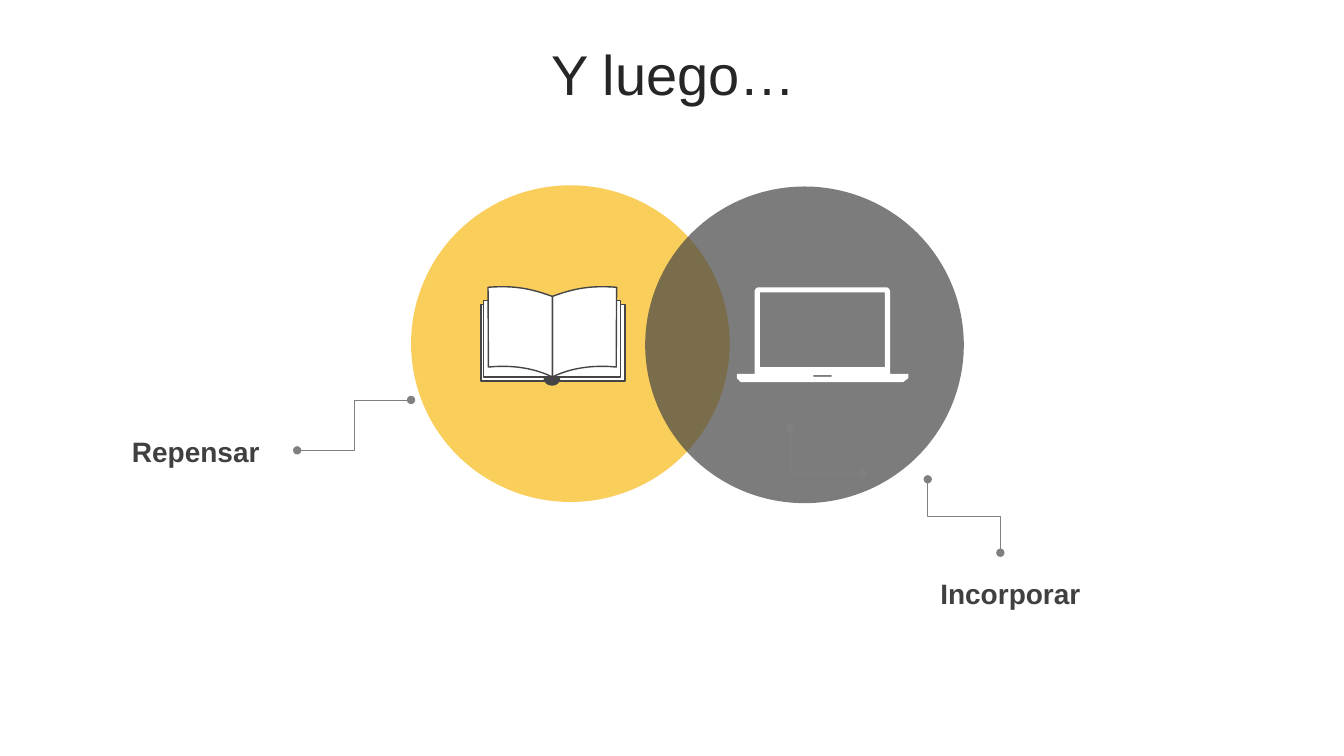
import pptx
import pptx.util
import pptx.dml.color
import pptx.enum.shapes
import pptx.enum.text
import pptx.oxml
import pptx.oxml.ns
import lxml.etree

Cm, Pt = pptx.util.Cm, pptx.util.Pt
RGB = pptx.dml.color.RGBColor.from_string
qn = pptx.oxml.ns.qn
MSO_SHAPE = pptx.enum.shapes.MSO_SHAPE
COLORS = {"title": "262626", "label": "404040", "yellow": "F8BA16",
          "dark": "454545", "line": "808080", "white": "FFFFFF"}


def style(shape, fill, line=None):
    shape.shadow.inherit = False
    shape.fill.solid()
    shape.fill.fore_color.rgb = RGB(COLORS[fill])
    if line:
        shape.line.color.rgb = RGB(COLORS[line])
        shape.line.width = Pt(1)
    else:
        shape.line.fill.background()


def outline(shapes, contours, fill, line=None):
    """Closed contours in cm; an entry of three points is a Bézier curve."""
    builder = None
    for start, *segments in contours:
        points = [start]
        for segment in segments:
            if len(segment) == 2:
                points.append(segment)
                continue
            corners = (points[-1], *segment)
            for step in range(1, 13):
                t = step / 12
                weights = ((1 - t) ** 3, 3 * t * (1 - t) ** 2, 3 * t * t * (1 - t), t ** 3)
                points.append(tuple(sum(w * corner[axis] for w, corner in zip(weights, corners))
                                    for axis in (0, 1)))
        points = [(Cm(x), Cm(y)) for x, y in points]
        if builder is None:
            builder = shapes.build_freeform(*points[0])
        else:
            builder.move_to(*points[0])
        builder.add_line_segments(points[1:], close=True)
    style(builder.convert_to_shape(), fill, line)


presentation = pptx.Presentation()
presentation.slide_width, presentation.slide_height = Cm(33.87), Cm(19.05)
slide = presentation.slides.add_slide(presentation.slide_layouts[6])

# Overlapping circles
circles = slide.shapes.add_group_shape()
for left, top, color in ((10.36, 4.67, "yellow"), (16.26, 4.7, "dark")):
    circle = circles.shapes.add_shape(MSO_SHAPE.OVAL, Cm(left), Cm(top), Cm(8.03), Cm(7.98))
    style(circle, color)
    solid_color = circle.fill._xPr.find(".//" + qn("a:srgbClr"))
    lxml.etree.SubElement(solid_color, qn("a:alpha"), val="70000")

# Title and labels
for text, left, top, width, height, size, color, bold in (
        ("Y luego…", 0.89, 0.94, 32.16, 2.01, 40, "title", False),
        ("Incorporar", 23.14, 14.4, 4.65, 1.11, 20, "label", True),
        ("Repensar", 2.79, 10.82, 4.29, 1.11, 20, "label", True)):
    box = slide.shapes.add_textbox(Cm(left), Cm(top), Cm(width), Cm(height))
    frame = box.text_frame
    frame.word_wrap = True
    frame.vertical_anchor = pptx.enum.text.MSO_ANCHOR.MIDDLE
    paragraph = frame.paragraphs[0]
    paragraph.text = text
    paragraph.alignment = pptx.enum.text.PP_ALIGN.CENTER
    if not bold:
        paragraph.line_spacing = 0.9
        paragraph.space_before = Pt(10)
    paragraph.font.name = "Arial"
    paragraph.font.size = Pt(size)
    paragraph.font.bold = bold
    paragraph.font.color.rgb = RGB(COLORS[color])

# Elbow connectors with round ends; the last one is turned to leave vertically
for x1, y1, x2, y2, bend, turn in (
        (7.49, 11.35, 10.36, 10.08, 50000, 0),
        (21.74, 11.94, 19.91, 10.77, 98200, 0),
        (23.37, 13.92, 25.22, 12.09, 50000, 270)):
    connector = slide.shapes.add_connector(pptx.enum.shapes.MSO_CONNECTOR.ELBOW,
                                           Cm(x1), Cm(y1), Cm(x2), Cm(y2))
    connector.line.color.rgb = RGB(COLORS["line"])
    connector.line.width = Pt(0.5)
    properties = connector._element.spPr
    if turn:
        properties.find(qn("a:xfrm")).set("rot", str(turn * 60000))
    guides = properties.find(qn("a:prstGeom")).find(qn("a:avLst"))
    lxml.etree.SubElement(guides, qn("a:gd"), name="adj1", fmla=f"val {bend}")
    for end in ("a:headEnd", "a:tailEnd"):
        lxml.etree.SubElement(properties.find(qn("a:ln")), qn(end), type="oval")
    lxml.etree.SubElement(properties, qn("a:effectLst"))

# Book: two covers, mirrored pages, spine
book = slide.shapes.add_group_shape().shapes
for left, top, width in ((12.12, 7.67, 3.63), (12.19, 7.57, 3.45)):
    cover = book.add_shape(MSO_SHAPE.RECTANGLE, Cm(left), Cm(top), Cm(width), Cm(1.93))
    style(cover, "white", "dark")
SPINE = 13.92
for side in (1, -1):
    page = [(SPINE, 7.47),
            ((SPINE + side * 0.56, 7.26), (SPINE + side, 7.19), (SPINE + side * 1.62, 7.24)),
            (SPINE + side * 1.61, 9.25),
            ((SPINE + side * 1.04, 9.19), (SPINE + side * 0.46, 9.27), (SPINE, 9.5))]
    outline(book, [page], "white", "dark")
outline(book, [[(13.72, 9.53), (14.1, 9.53), ((14.1, 9.63), (14.02, 9.7), (SPINE, 9.7)),
                ((13.8, 9.7), (13.72, 9.63), (13.72, 9.53))]], "dark", "dark")

# Laptop: body with screen and slot cut out
body = [(19.13, 7.24), (22.33, 7.24), ((22.38, 7.24), (22.43, 7.29), (22.43, 7.34)),
        (22.43, 9.42), (22.89, 9.42), (22.89, 9.53), (22.76, 9.63), (18.67, 9.63),
        (18.57, 9.53), (18.57, 9.42), (19.02, 9.42), (19.02, 7.34),
        ((19.02, 7.29), (19.07, 7.24), (19.13, 7.24))]
screen = [(19.15, 7.37), (19.15, 9.25), (22.3, 9.25), (22.3, 7.37)]
slot = [(20.5, 9.45), (20.5, 9.5), (20.96, 9.5), (20.96, 9.45)]
outline(slide.shapes, [body, screen, slot], "white")

presentation.save("out.pptx")
